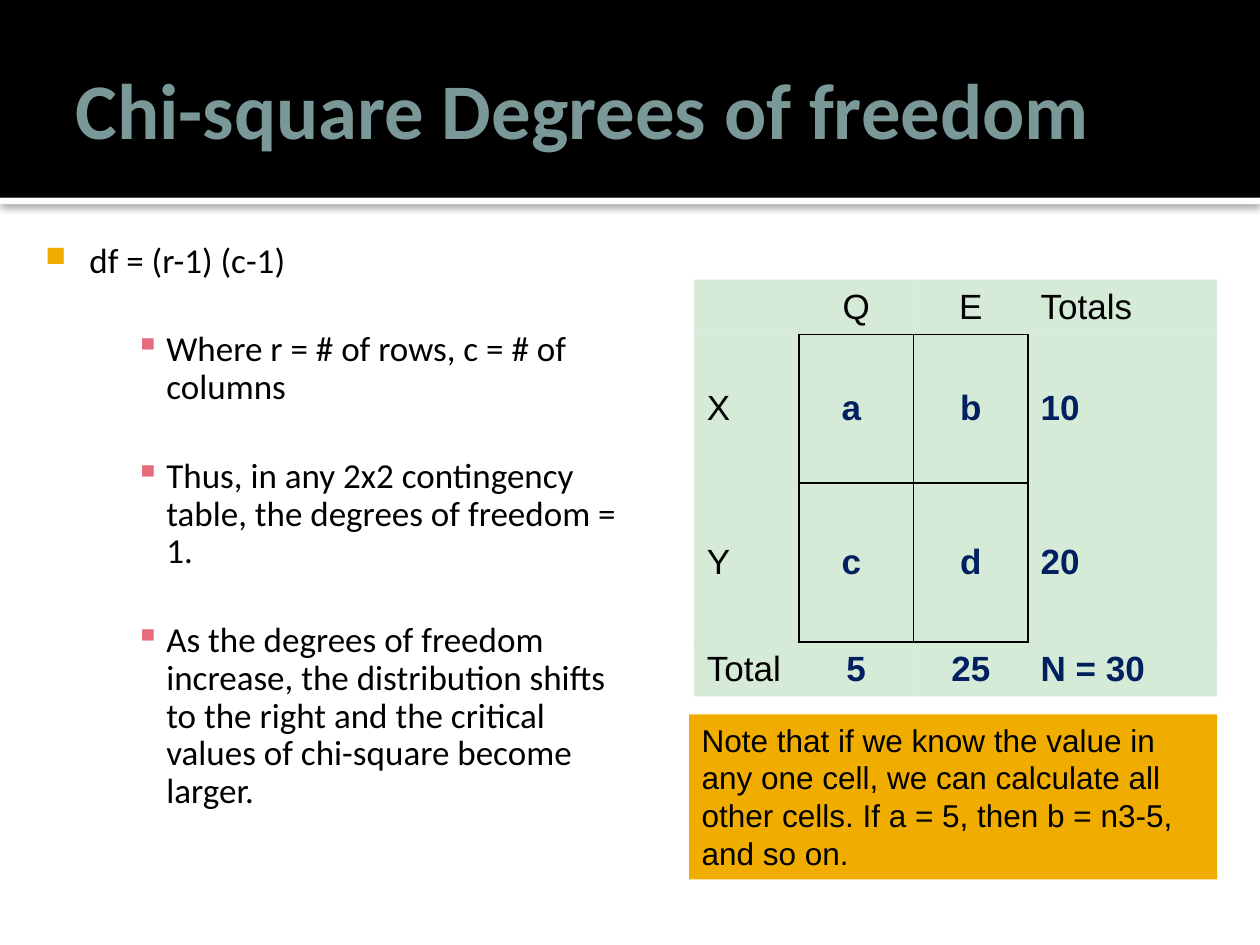
"""Build the slide on chi-square degrees of freedom."""
import pptx
import pptx.dml.color
import pptx.enum.shapes
import pptx.enum.text
import pptx.oxml
import pptx.oxml.ns
import pptx.util

COLORS = {"black": "000000", "white": "FFFFFF", "title": "7B9899", "gold": "F0AD00",
          "pink": "E66C7D", "green": "C4E2C5", "navy": "002060"}
TITLE = "Chi-square Degrees of freedom"
BODY = [
    ("main", "df = (r-1) (c-1)"),
    ("detail", "Where r = # of rows, c = # of columns"),
    ("detail", "Thus, in any 2x2 contingency table, the degrees of freedom = 1."),
    ("detail", "As the degrees of freedom increase, the distribution shifts to the right "
               "and the critical values of chi-square become larger."),
]
BULLETS = {
    "main": {"indent": (0.48, -0.35), "before": 0, "color": "gold", "size": 80, "char": "■"},
    "detail": {"indent": (1.09, -0.25), "before": 29, "color": "pink", "size": 100, "char": "▪"},
}
COUNTS = [
    ["", "Q", "E", "Totals"],
    ["X", "a ", "b", "10"],
    ["Y", "c ", "d", "20"],
    ["Total", "5", "25", "N = 30"],
]
COLUMN_WIDTHS = [0.83, 0.91, 0.91, 1.5]
ROW_HEIGHTS = [0.43, 1.18, 1.26, 0.43]
NOTE = ("Note that if we know the value in any one cell, we can calculate all other cells. "
        "If a = 5, then b = n3-5, and so on.")
WIDTH, HEIGHT, BAND = 10, 7.5, 1.57
BOXES = {
    "rule": (0, BAND, WIDTH, 0.05),
    "band": (0, 0, WIDTH, BAND),
    "title": (0.5, 0.17, 9, 1.37),
    "body": (0.17, 1.83, 4.92, 4.96),
    "table": (5.51, 2.22, sum(COLUMN_WIDTHS), sum(ROW_HEIGHTS)),
    "note": (5.47, 5.67, 4.19, 1.31),
}
SIDES = {"lnL": (0, -1), "lnR": (0, 1), "lnT": (-1, 0), "lnB": (1, 0)}
MIDDLE = pptx.enum.text.MSO_ANCHOR.MIDDLE
TOP = pptx.enum.text.MSO_ANCHOR.TOP
ALIGN = pptx.enum.text.PP_ALIGN


def inches(values):
    return [pptx.util.Inches(value) for value in values]


def color(name):
    return pptx.dml.color.RGBColor.from_string(COLORS[name])


def apply(target, formats):
    for name, value in formats.items():
        setattr(target, name, value)


def add_xml(parent, xml):
    namespace = pptx.oxml.ns.nsdecls("a")
    parent.append(pptx.oxml.parse_xml(xml.replace(">", f" {namespace}>", 1)))


def write(paragraph, text, size, font, color_name, bold=False, align=ALIGN.LEFT):
    paragraph.alignment = align
    run = paragraph.add_run()
    run.text = text
    apply(run.font, {"size": pptx.util.Pt(size), "name": font, "bold": bold})
    run.font.color.rgb = color(color_name)


def indent(paragraph, left, first):
    properties = paragraph._p.get_or_add_pPr()
    properties.set("marL", str(pptx.util.Inches(left)))
    properties.set("indent", str(pptx.util.Inches(first)))
    return properties


def set_frame(frame, margins, anchor):
    names = ("margin_left", "margin_top", "margin_right", "margin_bottom")
    apply(frame, dict(zip(names, inches(margins))))
    apply(frame, {"word_wrap": True, "vertical_anchor": anchor})


def add_block(slide, box, fill):
    shape = slide.shapes.add_shape(pptx.enum.shapes.MSO_SHAPE.RECTANGLE, *inches(BOXES[box]))
    shape.shadow.inherit = False
    shape.fill.solid()
    shape.fill.fore_color.rgb = color(fill)
    shape.line.fill.background()
    return shape


def add_header(slide):
    rule = add_block(slide, "rule", "white")
    effects = rule._element.spPr.find(pptx.oxml.ns.qn("a:effectLst"))
    add_xml(effects, '<a:outerShdw blurRad="63500" dist="10160" dir="5400000">'
            f'<a:srgbClr val="{COLORS["black"]}"><a:alpha val="60000"/></a:srgbClr></a:outerShdw>')
    add_block(slide, "band", "black")
    frame = slide.shapes.add_textbox(*inches(BOXES["title"])).text_frame
    set_frame(frame, (0.1, 0.05, 0.05, 0.05), MIDDLE)
    write(frame.paragraphs[0], TITLE, 45, "Calibri", "title", True)


def add_body(slide):
    frame = slide.shapes.add_textbox(*inches(BOXES["body"])).text_frame
    set_frame(frame, (0.06, 0.1, 0.1, 0.05), TOP)
    for index, (level, text) in enumerate(BODY):
        style = BULLETS[level]
        paragraph = frame.add_paragraph() if index else frame.paragraphs[0]
        apply(paragraph, {"line_spacing": 0.9, "space_before": pptx.util.Pt(style["before"])})
        write(paragraph, text, 20, "Calibri", "black")
        properties = indent(paragraph, *style["indent"])
        add_xml(properties, f'<a:buClr><a:srgbClr val="{COLORS[style["color"]]}"/></a:buClr>')
        add_xml(properties, f'<a:buSzPct val="{style["size"] * 1000}"></a:buSzPct>')
        add_xml(properties, f'<a:buChar char="{style["char"]}"></a:buChar>')


def is_core(row, column):
    return row in (1, 2) and column in (1, 2)


def format_cell(cell, row, column):
    properties = cell._tc.get_or_add_tcPr()
    for side, (down, across) in SIDES.items():
        ruled = is_core(row, column) or is_core(row + down, column + across)
        paint = (f'<a:solidFill><a:srgbClr val="{COLORS["black"]}"/></a:solidFill>'
                 if ruled else "<a:noFill/>")
        add_xml(properties, f'<a:{side} w="12700">{paint}</a:{side}>')
    cell.fill.solid()
    cell.fill.fore_color.rgb = color("green")
    tint = properties.find(".//" + pptx.oxml.ns.qn("a:solidFill") + "[last()]")
    tint = properties.find(pptx.oxml.ns.qn("a:solidFill")) if tint is not None else tint
    add_xml(tint[0], '<a:alpha val="68000"></a:alpha>')


def add_counts(slide):
    size = len(COUNTS), len(COUNTS[0])
    table = slide.shapes.add_table(*size, *inches(BOXES["table"])).table
    apply(table, {"first_row": False, "horz_banding": False})
    for column, width in zip(table.columns, inches(COLUMN_WIDTHS)):
        column.width = width
    for row, height in zip(table.rows, inches(ROW_HEIGHTS)):
        row.height = height
    for row, texts in enumerate(COUNTS):
        for column, text in enumerate(texts):
            cell = table.cell(row, column)
            cell.vertical_anchor = MIDDLE
            format_cell(cell, row, column)
            if text:
                value = row > 0 and column > 0
                paragraph = cell.text_frame.paragraphs[0]
                write(paragraph, text, 20, "Arial", "navy" if value else "black", value,
                      ALIGN.CENTER if column in (1, 2) else ALIGN.LEFT)
                indent(paragraph, 0.38, -0.38)


def add_note(slide):
    frame = add_block(slide, "note", "gold").text_frame
    set_frame(frame, (0.1, 0.05, 0.1, 0.05), TOP)
    write(frame.paragraphs[0], NOTE, 18, "Arial", "black")


def main():
    presentation = pptx.Presentation()
    apply(presentation, dict(zip(("slide_width", "slide_height"), inches((WIDTH, HEIGHT)))))
    slide = presentation.slides.add_slide(presentation.slide_layouts[6])
    for add_part in (add_header, add_body, add_counts, add_note):
        add_part(slide)
    presentation.save("out.pptx")


if __name__ == "__main__":
    main()
